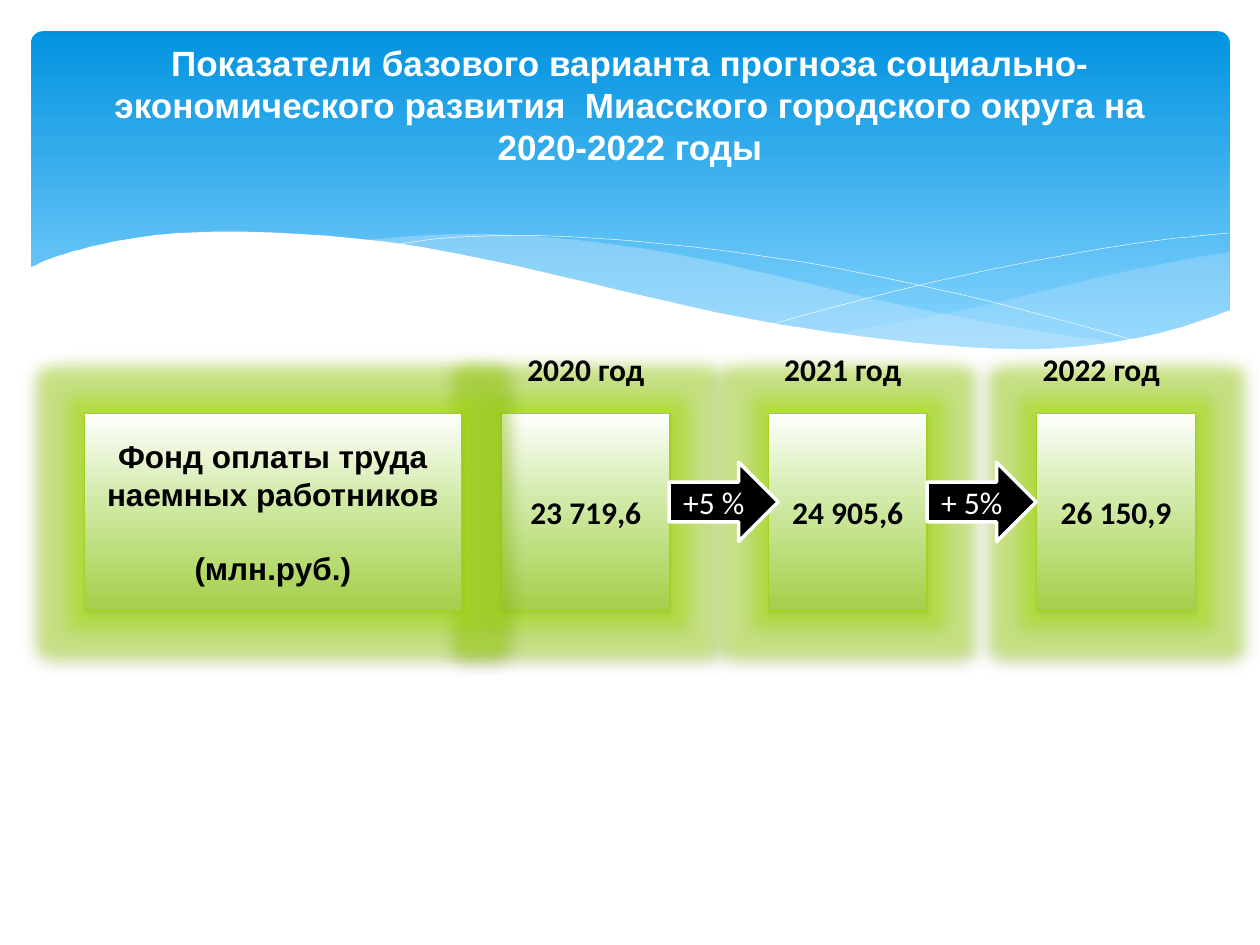
from dataclasses import dataclass

from lxml.etree import SubElement as Sub
from pptx import Presentation
from pptx.dml.color import RGBColor as Rgb
from pptx.enum.shapes import MSO_SHAPE as Kind
from pptx.enum.text import MSO_ANCHOR as Anchor, PP_ALIGN as Align
from pptx.oxml.ns import qn
from pptx.util import Cm, Pt


@dataclass(frozen=True)
class Theme:
    white: str = "FFFFFF"
    black: str = "000000"
    edge: str = "A5D028"
    glow: str = "ABEC04"
    foam: str = "C6E7FC"
    sky: tuple = ((0, "0293E0"), (90, "83D3FE"))
    leaf: tuple = ((0, "FFFFFF"), (44, "D1EAA7"), (100, "A4CF4A"))
    head: float = 20
    body: float = 18
    sans: str = "Arial"
    text: str = "Calibri"


@dataclass(frozen=True)
class Year:
    name: str
    value: str
    left: float
    width: float
    label: float  # left edge of the year label
    span: float  # width of the year label


@dataclass(frozen=True)
class Growth:
    text: str
    left: float


T = Theme()
TOP, HIGH = 8.33, 3.99
YEARS = (
    Year("2020 год", "23 719,6", 10.11, 3.4, 10.11, 3.4),
    Year("2021 год", "24 905,6", 15.49, 3.2, 15.49, 3),
    Year("2022 год", "26 150,9", 20.9, 3.2, 20.7, 3),
)
STEPS = (Growth("+5 %", 13.49), Growth("+ 5%", 18.69))

# Wave edges in centimetres, left to right unless closing an outline
SWELL_TOP = ((24.79, 5.08), (23.39, 5.33), (21.87, 5.66), (19.79, 6.17),
             (17.93, 6.53), (16.79, 6.73))
SWELL_LOW = ((16.79, 6.73), (17.91, 6.88), (19.23, 7.01), (20.68, 7.06),
             (22.15, 6.96), (23.39, 6.73), (24.79, 6.27))
CREST_TOP = ((22.68, 6.93), (20.5, 6.6), (17.93, 6.1), (15.57, 5.54),
             (13.39, 5.08), (11.2, 4.8), (9.17, 4.72), (7.26, 4.85))
CREST_LOW = ((7.26, 4.85), (9.19, 5.16), (11.4, 5.64), (13.46, 6.1),
             (15.7, 6.55), (17.65, 6.86), (19.33, 7.04), (20.78, 7.09),
             (21.77, 7.04), (22.68, 6.93))
FALL = ((7.85, 4.95), (8.97, 4.8), (10.57, 4.75), (12.42, 4.83), (14.78, 5.08),
        (16.89, 5.41), (19.3, 5.92), (21.11, 6.38), (23.04, 6.91))
RISE = ((15.57, 6.53), (17.65, 5.97), (19.71, 5.49), (22, 5.05),
        (23.47, 4.83), (24.77, 4.7))
SHORE = ((0.58, 5.41), (1.17, 5.16), (2.16, 4.9), (3.35, 4.72), (4.9, 4.67),
         (6.88, 4.78), (8.61, 5), (10.62, 5.41), (12.78, 5.92), (14.71, 6.35),
         (16.43, 6.65), (18.44, 6.91), (20.55, 7.04), (22.23, 6.93),
         (23.62, 6.65), (24.82, 6.25))
BASE = ((24.82, 8.36), (0.58, 8.36))


def curve(knots: tuple, parts: int = 6) -> list:
    """Catmull-Rom points through the knots."""
    ends = (knots[0], *knots, knots[-1])
    out = [knots[0]]
    for a, b, c, d in zip(ends, ends[1:], ends[2:], ends[3:]):
        for i in range(1, parts + 1):
            t = i / parts
            out.append(tuple(
                (2 * q + (r - p) * t + (2 * p - 5 * q + 4 * r - s) * t ** 2
                 + (3 * q - p - 3 * r + s) * t ** 3) / 2
                for p, q, r, s in zip(a, b, c, d)))
    return out


def tint(parent, color: str, alpha: float = 100) -> None:
    node = Sub(parent, qn("a:srgbClr"), val=color)
    if alpha < 100:
        Sub(node, qn("a:alpha"), val=str(int(alpha * 1000)))


def shade(shape, stops: tuple) -> None:
    """Fill from top to bottom with any number of stops."""
    shape.fill.gradient()
    shape.fill.gradient_angle = 270
    group = shape._element.spPr.find(qn("a:gradFill")).find(qn("a:gsLst"))
    for old in list(group):
        group.remove(old)
    for pos, color in stops:
        tint(Sub(group, qn("a:gs"), pos=str(pos * 1000)), color)


def paint(shape, color: str, alpha: float = 100) -> None:
    shape.fill.solid()
    shape.fill.fore_color.rgb = Rgb.from_string(color)
    if alpha < 100:
        node = shape._element.spPr.find(qn("a:solidFill"))[0]
        Sub(node, qn("a:alpha"), val=str(int(alpha * 1000)))


def stroke(shape, color: str, width: float) -> None:
    shape.line.color.rgb = Rgb.from_string(color)
    shape.line.width = Pt(width)


def halo(shape) -> None:
    """Add the green glow and the soft drop shadow."""
    effects = shape._element.spPr.find(qn("a:effectLst"))
    tint(Sub(effects, qn("a:glow"), rad=str(Pt(18))), T.glow, 40)
    drop = Sub(effects, qn("a:outerShdw"), blurRad=str(Pt(3.1)),
               dist=str(Pt(1.6)), dir="5400000", rotWithShape="0")
    tint(drop, T.black, 38)


def write(shape, *lines: str, font: str = T.text, size: float = T.body,
          color: str = T.black, bold: bool = True, wrap: bool = True,
          anchor=Anchor.MIDDLE, gap: float = 0) -> None:
    frame = shape.text_frame
    frame.word_wrap, frame.vertical_anchor = wrap, anchor
    for i, line in enumerate(lines):
        para = frame.add_paragraph() if i else frame.paragraphs[0]
        para.alignment = Align.CENTER
        para.space_before = Pt(gap if i else 0)
        run = para.add_run()
        run.text = line
        run.font.name, run.font.size, run.font.bold = font, Pt(size), bold
        run.font.color.rgb = Rgb.from_string(color)


def block(slide, kind, left: float, top: float, width: float, high: float):
    shape = slide.shapes.add_shape(kind, Cm(left), Cm(top), Cm(width), Cm(high))
    shape.shadow.inherit = False
    return shape


def card(slide, left: float, width: float, *lines: str, **style) -> None:
    shape = block(slide, Kind.RECTANGLE, left, TOP, width, HIGH)
    shade(shape, T.leaf)
    stroke(shape, T.edge, 0.75)
    halo(shape)
    write(shape, *lines, **style)


def trace(slide, points: list, close: bool):
    (x, y), *rest = points
    path = slide.shapes.build_freeform(x * 100, y * 100, Cm(0.01))
    path.add_line_segments([(a * 100, b * 100) for a, b in rest], close=close)
    shape = path.convert_to_shape()
    shape.shadow.inherit = False
    return shape


def wave(slide, points: list, color: str, alpha: float = 100) -> None:
    shape = trace(slide, points, True)
    paint(shape, color, alpha)
    shape.line.fill.background()


def ripple(slide, knots: tuple) -> None:
    shape = trace(slide, curve(knots), False)
    shape.fill.background()
    stroke(shape, T.white, 0.25)


def banner(slide) -> None:
    panel = block(slide, Kind.ROUNDED_RECTANGLE, 0.63, 0.63, 24.16, 6.86)
    panel.adjustments[0] = 0.034
    shade(panel, T.sky)
    panel.line.fill.background()
    wave(slide, curve(SWELL_TOP) + curve(SWELL_LOW), T.foam, 29)
    wave(slide, curve(CREST_TOP) + curve(CREST_LOW), T.foam, 40)
    ripple(slide, FALL)
    ripple(slide, RISE)
    wave(slide, curve(SHORE) + list(BASE), T.white)


def heading(slide, text: str) -> None:
    title = slide.shapes.title
    slide.shapes._spTree.append(title._element)  # bring above the banner
    title.left, title.top = Cm(1.27), Cm(0.76)
    title.width, title.height = Cm(22.86), Cm(3.56)
    title.text_frame.margin_bottom = Cm(1)
    write(title, text, font=T.sans, size=T.head, color=T.white)


def main() -> None:
    deck = Presentation()
    deck.slide_width, deck.slide_height = Cm(25.4), Cm(19.05)
    slide = deck.slides.add_slide(deck.slide_layouts[5])
    banner(slide)
    heading(slide, "Показатели базового варианта прогноза социально-экономического "
                   "развития  Миасского городского округа на 2020-2022 годы")
    for year in YEARS:
        card(slide, year.left, year.width, year.value)
    for step in STEPS:
        arrow = block(slide, Kind.RIGHT_ARROW, step.left, 9.32, 2.2, 1.6)
        paint(arrow, T.black)
        stroke(arrow, T.white, 2)
        write(arrow, step.text, color=T.white, bold=False, wrap=False)
    for year in YEARS:
        label = slide.shapes.add_textbox(Cm(year.label), Cm(6.93), Cm(year.span), Cm(1))
        write(label, year.name, anchor=Anchor.TOP)
    card(slide, 1.7, 7.6, "Фонд оплаты труда наемных работников", "(млн.руб.)",
         font=T.sans, gap=21)
    deck.save("out.pptx")


if __name__ == "__main__":
    main()
